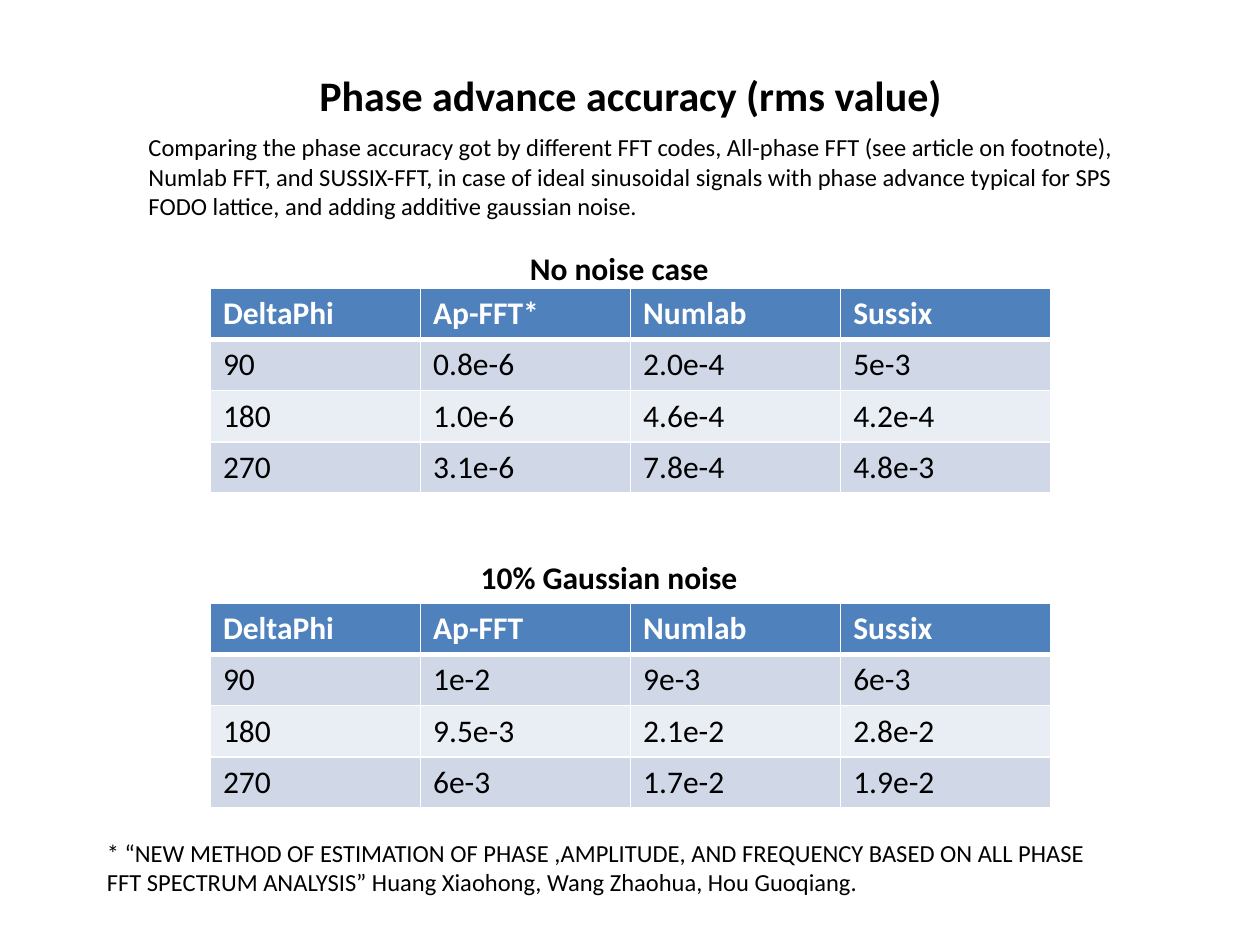
from lxml import etree
from pptx import Presentation
from pptx import util as u
from pptx.dml.color import RGBColor
from pptx.enum import text
from pptx.oxml import ns

Inches = u.Inches
FONT = "Calibri"
BLACK, WHITE = "000000", "FFFFFF"
HEADER_FILL = "4F81BD"
BAND_FILLS = ["D0D8E8", "E9EDF4"]


def color(hex_string):
    return RGBColor.from_string(hex_string)


def write(frame, content, size=18, bold=False, fill=BLACK, align=text.PP_ALIGN.LEFT):
    frame.word_wrap = True
    paragraph = frame.paragraphs[0]
    paragraph.alignment = align
    run = paragraph.add_run()
    run.text = content
    run.font.name = FONT
    run.font.size = u.Pt(size)
    run.font.bold = bold
    run.font.color.rgb = color(fill)


presentation = Presentation()
presentation.slide_width = Inches(10)
presentation.slide_height = Inches(7.5)
slide = presentation.slides.add_slide(presentation.slide_layouts[5])

title = slide.shapes.title
title.left, title.top = Inches(2.42), Inches(0.5)
title.width, title.height = Inches(5.17), Inches(0.5)
title.text_frame.vertical_anchor = text.MSO_ANCHOR.TOP
title.text_frame.auto_size = text.MSO_AUTO_SIZE.NONE
write(title.text_frame, "Phase advance accuracy (rms value)", size=24, bold=True,
      align=text.PP_ALIGN.CENTER)

# Result tables: top, rows
tables = [
    (2.29, [
        ["DeltaPhi", "Ap-FFT*", "Numlab", "Sussix"],
        ["90", "0.8e-6", "2.0e-4", "5e-3"],
        ["180", "1.0e-6", "4.6e-4", "4.2e-4"],
        ["270", "3.1e-6", "7.8e-4", "4.8e-3"],
    ]),
    (4.79, [
        ["DeltaPhi", "Ap-FFT", "Numlab", "Sussix"],
        ["90", "1e-2", "9e-3", "6e-3"],
        ["180", "9.5e-3", "2.1e-2", "2.8e-2"],
        ["270", "6e-3", "1.7e-2", "1.9e-2"],
    ]),
]
for top, rows in tables:
    table = slide.shapes.add_table(len(rows), len(rows[0]), Inches(1.67), Inches(top),
                                   Inches(6.67), Inches(1.62)).table
    for row_index, row in enumerate(rows):
        is_header = row_index == 0
        cell_fill = HEADER_FILL if is_header else BAND_FILLS[(row_index - 1) % 2]
        # The line between the header and the first row is thicker
        border_widths = {"lnL": 1, "lnR": 1, "lnT": 3 if row_index == 1 else 1,
                         "lnB": 3 if is_header else 1}
        for column_index, value in enumerate(row):
            cell = table.cell(row_index, column_index)
            properties = cell._tc.get_or_add_tcPr()
            for side, width in border_widths.items():
                line = etree.SubElement(properties, ns.qn(f"a:{side}"), w=str(u.Pt(width)))
                line_fill = etree.SubElement(line, ns.qn("a:solidFill"))
                etree.SubElement(line_fill, ns.qn("a:srgbClr"), val=WHITE)
            cell.fill.solid()
            cell.fill.fore_color.rgb = color(cell_fill)
            write(cell.text_frame, value, bold=is_header,
                  fill=WHITE if is_header else BLACK)

# Captions and body text: left, top, width, height, content, format
caption = {"bold": True, "align": text.PP_ALIGN.CENTER}
body = {"size": 14}
text_boxes = [
    (2.33, 1.93, 5.17, 0.42, "No noise case", caption),
    (2.25, 4.38, 5.17, 0.42, "10% Gaussian noise", caption),
    (0.75, 6.6, 8.17, 0.57,
     "* “NEW METHOD OF ESTIMATION OF PHASE ,AMPLITUDE, AND FREQUENCY BASED ON "
     "ALL PHASE FFT SPECTRUM ANALYSIS” Huang Xiaohong, Wang Zhaohua, Hou Guoqiang.",
     body),
    (1.08, 1, 8.08, 0.81,
     "Comparing the phase accuracy got by different FFT codes, All-phase FFT (see "
     "article on footnote), Numlab FFT, and SUSSIX-FFT, in case of ideal sinusoidal "
     "signals with phase advance typical for SPS FODO lattice, and adding additive "
     "gaussian noise.",
     body),
]
for left, top, width, height, content, text_format in text_boxes:
    box = slide.shapes.add_textbox(Inches(left), Inches(top), Inches(width), Inches(height))
    write(box.text_frame, content, **text_format)

presentation.save("out.pptx")
